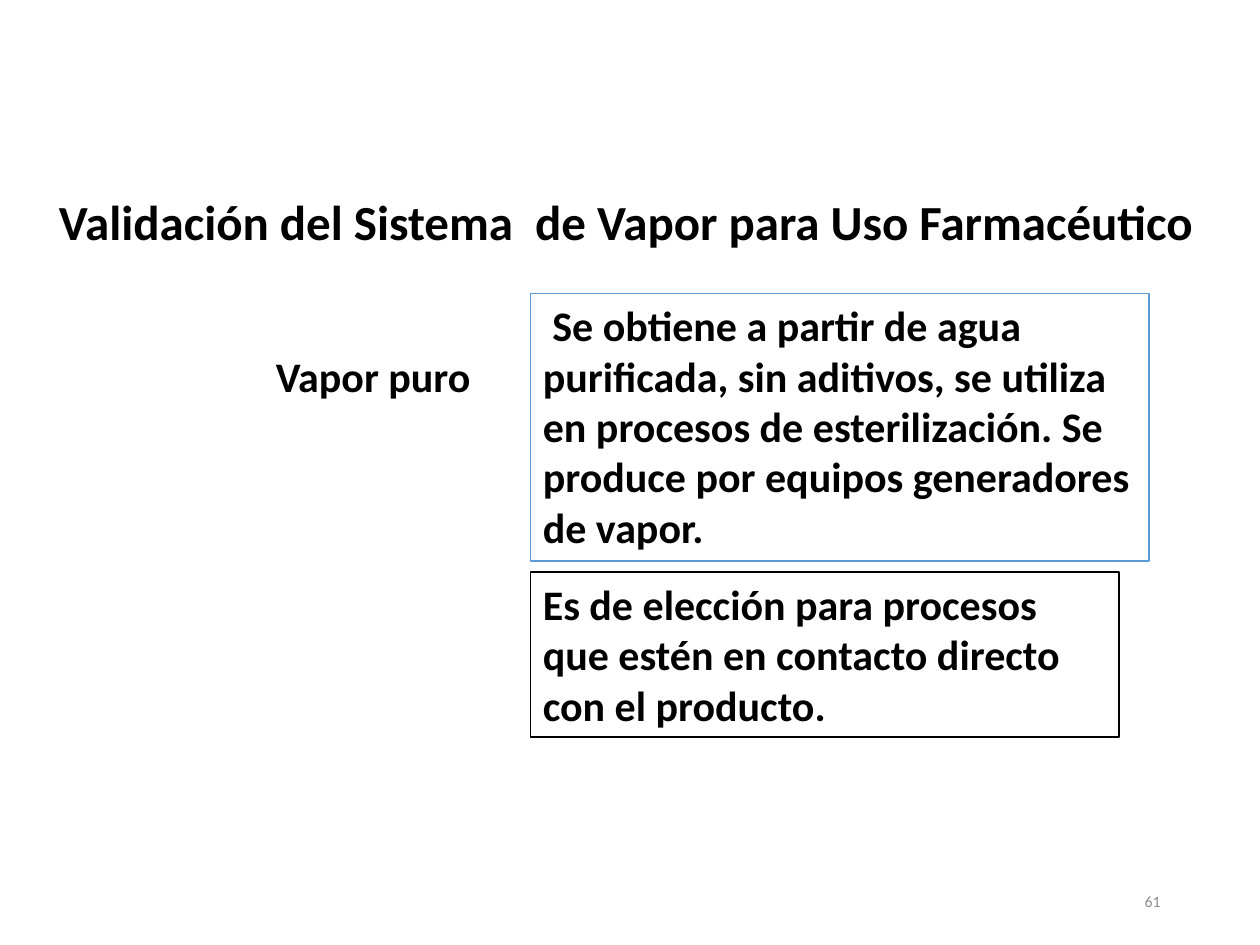
from dataclasses import dataclass
from pptx import Presentation
from pptx.dml.color import RGBColor
from pptx.enum import shapes, text
from pptx.util import Inches, Pt


@dataclass(frozen=True)
class Theme:
    font: str = "Calibri"
    ink: str = "000000"
    paper: str = "FFFFFF"
    blue: str = "5B9BD5"
    gray: str = "8C8C8C"
    head: int = 28
    body: int = 24
    small: int = 9


theme = Theme()


def place(shape, left, top, width, height):
    shape.left, shape.top = Inches(left), Inches(top)
    shape.width, shape.height = Inches(width), Inches(height)


def write(shape, words, size, color=theme.ink, bold=True, wrap=True,
          align=text.PP_ALIGN.LEFT, anchor=text.MSO_ANCHOR.TOP):
    frame = shape.text_frame
    frame.text = words
    frame.word_wrap = wrap
    frame.auto_size = text.MSO_AUTO_SIZE.NONE
    frame.vertical_anchor = anchor
    par = frame.paragraphs[0]
    par.alignment = align
    font = par.runs[0].font
    font.name, font.size, font.bold = theme.font, Pt(size), bold
    font.color.rgb = RGBColor.from_string(color)


deck = Presentation()
deck.slide_width, deck.slide_height = Inches(10), Inches(7.5)
slide = deck.slides.add_slide(deck.slide_layouts[5])

title = slide.shapes.title
place(title, 0.28, 1.47, 9.33, 0.57)
write(title, " Validación del Sistema  de Vapor para Uso Farmacéutico",
      theme.head, wrap=False)

label = slide.shapes.add_textbox(0, 0, 0, 0)
place(label, 2.09, 2.73, 1.75, 0.5)
write(label, "Vapor puro", theme.body, wrap=False)

boxes = [
    (4.54, 4.67, 1.31, theme.ink,
     "Es de elección para procesos que estén en contacto directo con el producto."),
    (2.33, 4.91, 2.12, theme.blue,
     " Se obtiene a partir de agua purificada, sin aditivos, se utiliza en procesos "
     "de esterilización. Se produce por equipos generadores de vapor."),
]
for top, width, height, edge, words in boxes:
    box = slide.shapes.add_shape(shapes.MSO_SHAPE.RECTANGLE, 0, 0, 0, 0)
    place(box, 4.21, top, width, height)
    box.shadow.inherit = False
    box.fill.solid()
    box.fill.fore_color.rgb = RGBColor.from_string(theme.paper)
    box.line.color.rgb = RGBColor.from_string(edge)
    box.line.width = Pt(1)
    write(box, words, theme.body)

number = slide.shapes.add_textbox(0, 0, 0, 0)
place(number, 7.06, 6.95, 2.25, 0.4)
write(number, "61", theme.small, theme.gray, bold=False,
      align=text.PP_ALIGN.RIGHT, anchor=text.MSO_ANCHOR.MIDDLE)

deck.save("out.pptx")
